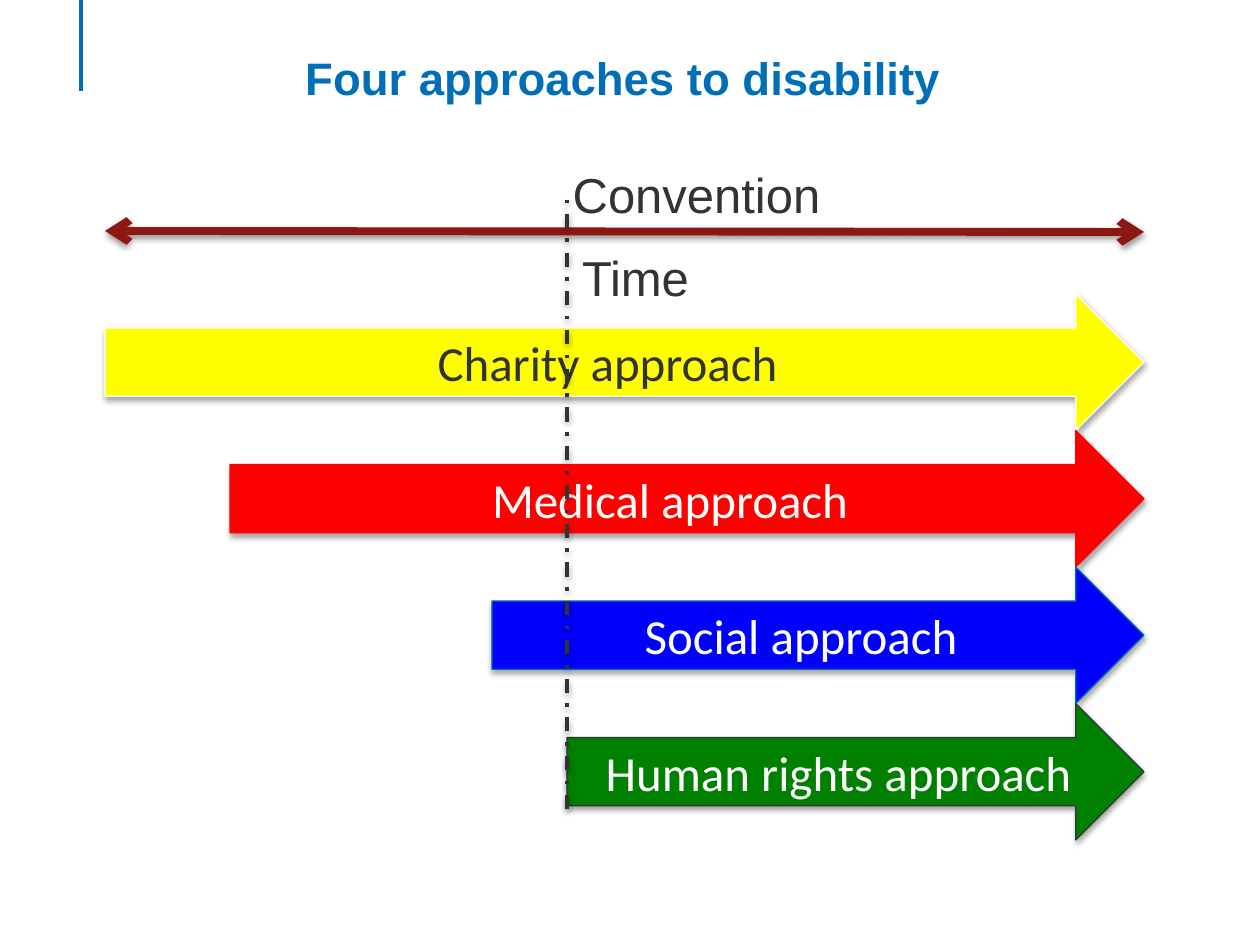
"""Build a slide that sets four approaches to disability along a time line."""
from lxml import etree
from pptx import Presentation
from pptx import util as u
from pptx.dml.color import RGBColor
from pptx.enum import dml, shapes, text
from pptx.oxml.ns import qn

SCALE = 914400 / 126
HUES = {
    "title": "006FB7", "ink": "333333", "time": "8C1713", "white": "FFFFFF",
    "yellow": "FFFF00", "red": "FF0000", "blue": "0000FF", "edge": "006DB3",
    "green": "008000",
}
LABELS = [
    ("Four approaches to disability", (102, 38, 1042, 150), 26, "title", True, 12),
    ("Time", (546, 242, 179, 72), 28, "ink", False, 6),
    ("Convention", (546, 158, 301, 72), 28, "ink", False, 6),
]
ARROWS = [
    ("Charity approach", 105, "yellow", "white", "ink"),
    ("Medical approach", 230, "red", "red", "white"),
    ("Social approach", 492, "blue", "edge", "white"),
    ("Human rights approach", 567, "green", "ink", "white"),
]
RIGHT, TOP, STEP = 1144, 294, 136.5


def px(n):
    return u.Emu(round(n * SCALE))


def hue(name):
    return RGBColor.from_string(HUES[name])


def write(shape, words, size, font, color, bold=False):
    frame = shape.text_frame
    frame.word_wrap = True
    para = frame.paragraphs[0]
    para.text = words
    para.alignment = text.PP_ALIGN.CENTER
    para.font.name, para.font.size, para.font.bold = font, u.Pt(size), bold
    para.font.color.rgb = hue(color)
    return frame


def shade(shape, alpha=0, dist=0):
    props = shape._element.spPr
    for old in props.findall(qn("a:effectLst")):
        props.remove(old)
    effects = etree.SubElement(props, qn("a:effectLst"))
    if alpha:
        cast = etree.SubElement(
            effects, qn("a:outerShdw"), blurRad="40000", dist=str(dist),
            dir="5400000", rotWithShape="0")
        tone = etree.SubElement(cast, qn("a:srgbClr"), val="000000")
        etree.SubElement(tone, qn("a:alpha"), val=str(alpha * 1000))


def rule(tree, ends, color, width, alpha=0, dash=None, heads=False):
    line = tree.add_connector(shapes.MSO_CONNECTOR.STRAIGHT, *map(px, ends))
    line.line.color.rgb = hue(color)
    line.line.width = u.Pt(width)
    if dash:
        line.line.dash_style = dash
    if heads:
        for tag in ("a:headEnd", "a:tailEnd"):
            etree.SubElement(line.line._ln, qn(tag), type="arrow")
    shade(line, alpha, 20000)


def label(tree, words, place, size, color, bold, inset):
    box = tree.add_textbox(*map(px, place))
    write(box, words, size, "Arial", color, bold).margin_top = px(inset)


def arrow(tree, row, words, left, fill, edge, ink):
    place = (left, TOP + row * STEP, RIGHT - left, STEP)
    shape = tree.add_shape(shapes.MSO_SHAPE.RIGHT_ARROW, *map(px, place))
    shape.fill.solid()
    shape.fill.fore_color.rgb = hue(fill)
    shape.line.color.rgb = hue(edge)
    shape.line.width = u.Pt(0.75)
    shade(shape, 35, 23000)
    frame = write(shape, words, 28, "Calibri", ink)
    frame.vertical_anchor = text.MSO_ANCHOR.MIDDLE


def main():
    deck = Presentation()
    deck.slide_width, deck.slide_height = px(1260), px(945)
    tree = deck.slides.add_slide(deck.slide_layouts[6]).shapes
    title, time, event = LABELS
    rule(tree, (81, 0, 81, 91), "title", 2)
    label(tree, *title)
    rule(tree, (105, 231, RIGHT, 232), "time", 4.5, 38, heads=True)
    label(tree, *time)
    for row, item in enumerate(ARROWS):
        arrow(tree, row, *item)
    rule(tree, (567, 809, 567, 200), "ink", 2, 38, dml.MSO_LINE.DASH_DOT)
    label(tree, *event)
    deck.save("out.pptx")


if __name__ == "__main__":
    main()
